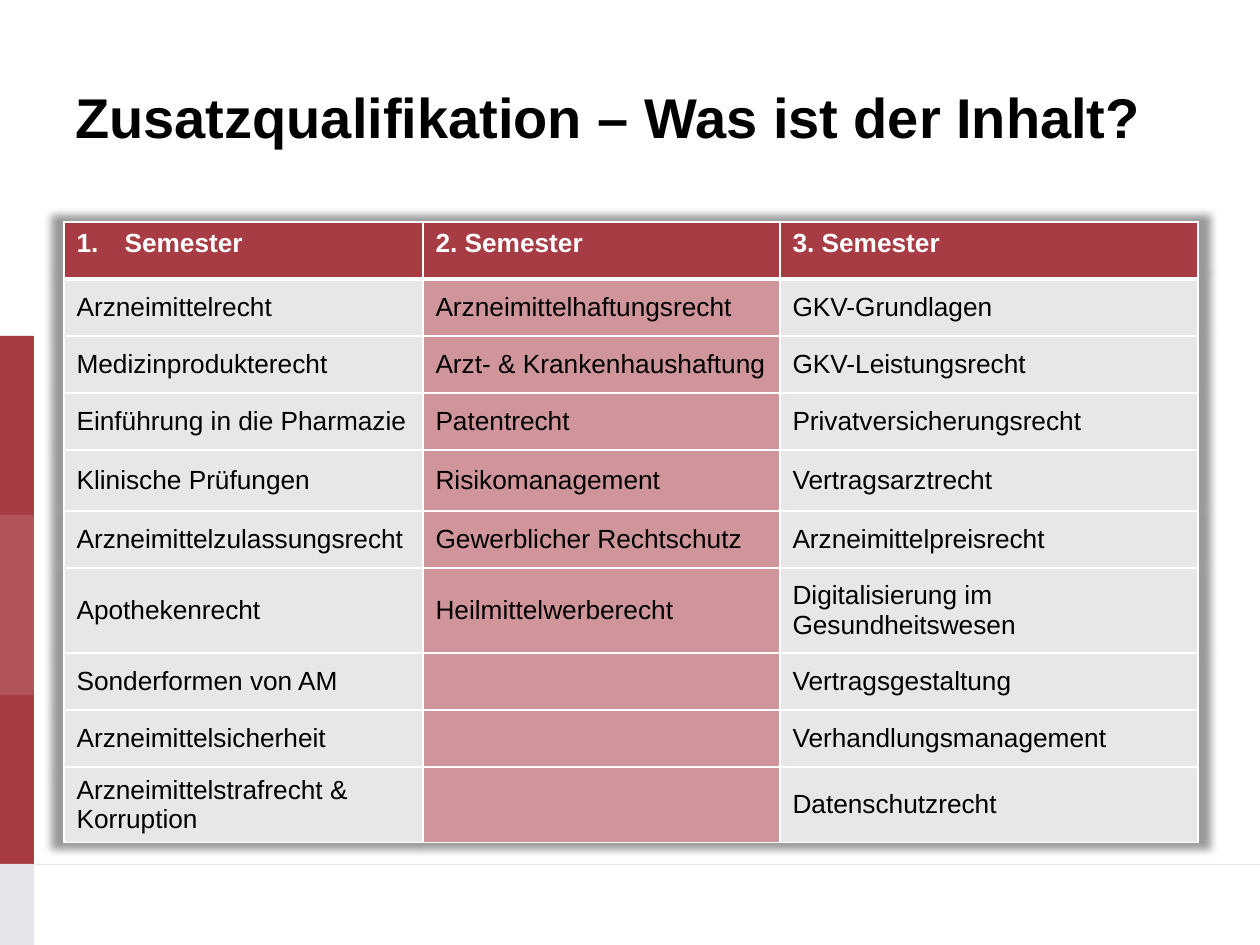
import dataclasses

import lxml.etree
import pptx
import pptx.dml.color
import pptx.enum.shapes
import pptx.enum.text
import pptx.oxml
import pptx.oxml.ns
import pptx.util

SCALE = 914400 / 126


def px(length):
    return pptx.util.Emu(round(length * SCALE))


def rgb(value):
    return pptx.dml.color.RGBColor.from_string(value)


@dataclasses.dataclass(frozen=True)
class Theme:
    font: str = "Arial"
    title_size: int = 32
    table_size: int = 15
    black: str = "000000"
    white: str = "FFFFFF"
    red: str = "A73C45"
    light_red: str = "B2545C"
    pink: str = "CF959B"
    cell_gray: str = "E7E7E7"
    pale_gray: str = "E4E5EA"


class SlideBuilder:
    def __init__(self, slide, theme):
        self.slide = slide
        self.theme = theme

    def bar(self, left, top, width, height, color):
        shape = self.slide.shapes.add_shape(
            pptx.enum.shapes.MSO_SHAPE.RECTANGLE, px(left), px(top), px(width), px(height))
        shape.shadow.inherit = False
        shape.fill.solid()
        shape.fill.fore_color.rgb = rgb(color)
        shape.line.fill.background()

    def rule(self, left, top, width, color, points):
        connector = self.slide.shapes.add_connector(
            pptx.enum.shapes.MSO_CONNECTOR.STRAIGHT, px(left), px(top), px(left + width), px(top))
        connector.line.color.rgb = rgb(color)
        connector.line.width = pptx.util.Pt(points)
        properties = connector.element.find(pptx.oxml.ns.qn("p:spPr"))
        lxml.etree.SubElement(properties, pptx.oxml.ns.qn("a:effectLst"))

    def run(self, paragraph, text, size, color, bold):
        run = paragraph.add_run()
        run.text = text
        run.font.name = self.theme.font
        run.font.size = pptx.util.Pt(size)
        run.font.bold = bold
        run.font.color.rgb = rgb(color)

    def title(self, left, top, width, height, text):
        frame = self.slide.shapes.add_textbox(px(left), px(top), px(width), px(height)).text_frame
        frame.word_wrap = True
        frame.vertical_anchor = pptx.enum.text.MSO_ANCHOR.MIDDLE
        self.run(frame.paragraphs[0], text, self.theme.title_size, self.theme.black, True)

    def number(self, paragraph, indent):
        properties = paragraph._p.get_or_add_pPr()
        properties.set("marL", str(px(indent)))
        properties.set("indent", str(-px(indent)))
        bullet = lxml.etree.SubElement(properties, pptx.oxml.ns.qn("a:buAutoNum"))
        bullet.set("type", "arabicPeriod")
        paragraph.font.size = pptx.util.Pt(self.theme.table_size)
        paragraph.font.bold = True
        paragraph.font.color.rgb = rgb(self.theme.white)

    def border(self, cell, side, points):
        line = pptx.oxml.parse_xml(
            f'<a:{side} {pptx.oxml.ns.nsdecls("a")} w="{pptx.util.Pt(points)}"><a:solidFill>'
            f'<a:srgbClr val="{self.theme.white}"/></a:solidFill></a:{side}>')
        cell._tc.get_or_add_tcPr().append(line)

    def cell(self, cell, text, row, column):
        header = row == 0
        for side in ("lnL", "lnR", "lnT", "lnB"):
            below_header = (row, side) in ((0, "lnB"), (1, "lnT"))
            self.border(cell, side, 3 if below_header else 1)
        body_fill = self.theme.pink if column == 1 else self.theme.cell_gray
        cell.fill.solid()
        cell.fill.fore_color.rgb = rgb(self.theme.red if header else body_fill)
        if not header:
            cell.vertical_anchor = pptx.enum.text.MSO_ANCHOR.MIDDLE
        paragraph = cell.text_frame.paragraphs[0]
        if header and column == 0:
            self.number(paragraph, 48)
        if text:
            color = self.theme.white if header else self.theme.black
            self.run(paragraph, text, self.theme.table_size, color, header)

    def table(self, left, top, widths, heights, rows):
        table = self.slide.shapes.add_table(
            len(heights), len(widths), px(left), px(top), px(sum(widths)), px(sum(heights))).table
        for column, width in zip(table.columns, widths):
            column.width = px(width)
        for row, height in zip(table.rows, heights):
            row.height = px(height)
        for row_index, texts in enumerate(rows):
            for column_index, text in enumerate(texts):
                self.cell(table.cell(row_index, column_index), text, row_index, column_index)
        shadow = pptx.oxml.parse_xml(
            f'<a:effectLst {pptx.oxml.ns.nsdecls("a")}>'
            '<a:outerShdw blurRad="63500" sx="102000" sy="102000" algn="ctr" rotWithShape="0">'
            f'<a:srgbClr val="{self.theme.black}"><a:alpha val="40000"/></a:srgbClr>'
            '</a:outerShdw></a:effectLst>')
        table._tbl.tblPr.insert(0, shadow)


ROWS = [
    ("Semester", "2. Semester", "3. Semester"),
    ("Arzneimittelrecht", "Arzneimittelhaftungsrecht", "GKV-Grundlagen"),
    ("Medizinprodukterecht", "Arzt- & Krankenhaushaftung", "GKV-Leistungsrecht"),
    ("Einführung in die Pharmazie", "Patentrecht", "Privatversicherungsrecht"),
    ("Klinische Prüfungen", "Risikomanagement", "Vertragsarztrecht"),
    ("Arzneimittelzulassungsrecht", "Gewerblicher Rechtschutz", "Arzneimittelpreisrecht"),
    ("Apothekenrecht", "Heilmittelwerberecht", "Digitalisierung im Gesundheitswesen"),
    ("Sonderformen von AM", "", "Vertragsgestaltung"),
    ("Arzneimittelsicherheit", "", "Verhandlungsmanagement"),
    ("Arzneimittelstrafrecht & Korruption", "", "Datenschutzrecht"),
]


def main():
    presentation = pptx.Presentation()
    presentation.slide_width = px(1260)
    presentation.slide_height = px(945)
    slide = presentation.slides.add_slide(presentation.slide_layouts[6])
    theme = Theme()
    builder = SlideBuilder(slide, theme)

    builder.rule(0, 864, 1260, theme.pale_gray, 0.5)
    top = 336
    for height, color in ((179, theme.red), (180, theme.light_red),
                          (169, theme.red), (81, theme.pale_gray)):
        builder.bar(0, top, 34, height, color)
        top += height

    builder.title(63, 38, 1134, 157, "Zusatzqualifikation – Was ist der Inhalt?")
    heights = [57] * 4 + [61, 57, 85, 57, 57, 73]
    builder.table(64, 222, (359, 357, 418), heights, ROWS)
    presentation.save("out.pptx")


if __name__ == "__main__":
    main()
